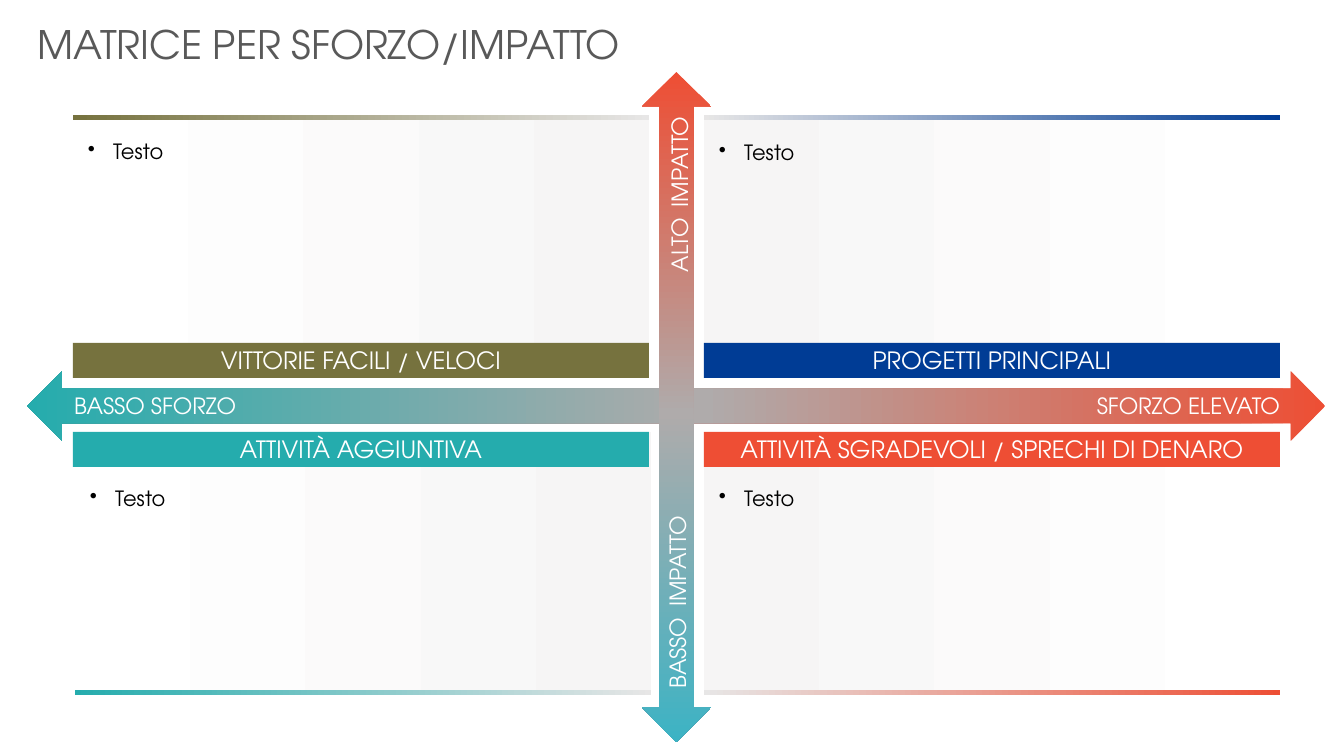
import copy

import pptx
import pptx.util
from lxml import etree
from pptx.dml.color import RGBColor
from pptx.enum.shapes import MSO_SHAPE
from pptx.enum.text import MSO_ANCHOR, MSO_AUTO_SIZE, PP_ALIGN
from pptx.oxml.ns import qn

COLORS = {
    "title": "595959", "text": "000000", "white": "FFFFFF",
    "panel": "F6F5F5", "fade": "E7E6E6", "middle": "AFABAB",
    "olive": "76723E", "blue": "003C95", "teal": "25ACAD", "red": "EE4E34",
    "warm": "ED4F35", "aqua": "3CB3C4",
}
PANEL_WIDTH, PANEL_HEIGHT = 576, 262
HEADER_HEIGHT, RULE_HEIGHT = 35, 5


class MatrixSlide:
    font = "TeX Gyre Adventor"
    scale = 914400 / 100.8

    def __init__(self, deck):
        deck.slide_width, deck.slide_height = self.px(1344), self.px(756)
        self.page = deck.slides.add_slide(deck.slide_layouts[5])

    def px(self, length):
        return pptx.util.Emu(round(length * self.scale))

    def place(self, left, top, width, height):
        return [self.px(value) for value in (left, top, width, height)]

    def style(self, para, size, color, align=PP_ALIGN.LEFT):
        para.alignment = align
        para.font.name = self.font
        para.font.size = pptx.util.Pt(size)
        para.font.color.rgb = RGBColor.from_string(COLORS[color])

    def margins(self, frame, left=0, top=0, right=0, bottom=0):
        frame.margin_left, frame.margin_top = self.px(left), self.px(top)
        frame.margin_right, frame.margin_bottom = self.px(right), self.px(bottom)

    def title(self, text, *area):
        box = self.page.shapes.title
        box.left, box.top, box.width, box.height = self.place(*area)
        frame = box.text_frame
        frame.text = text
        frame.vertical_anchor = MSO_ANCHOR.TOP
        frame.auto_size = MSO_AUTO_SIZE.SHAPE_TO_FIT_TEXT
        self.style(frame.paragraphs[0], 28, "title")

    def shape(self, kind, *area):
        shape = self.page.shapes.add_shape(kind, *self.place(*area))
        shape.shadow.inherit = False
        shape.line.fill.background()
        return shape

    def gradient(self, shape, stops, angle=0):
        """Fill with (position, color) stops; angle is counter-clockwise."""
        shape.fill.gradient()
        stop_list = shape.element.spPr.find(".//" + qn("a:gsLst"))
        while len(stop_list) < len(stops):
            stop_list.append(copy.deepcopy(stop_list[0]))
        for stop, (position, color) in zip(shape.fill.gradient_stops, stops):
            stop.position = position
            stop.color.rgb = RGBColor.from_string(COLORS[color])
        shape.fill.gradient_angle = angle

    def panel(self, left, top, start, end, text, inset_top, inset_bottom):
        box = self.shape(MSO_SHAPE.RECTANGLE, left, top, PANEL_WIDTH, PANEL_HEIGHT)
        self.gradient(box, [(0, start), (1, end)])
        frame = box.text_frame
        frame.text = text
        frame.vertical_anchor = MSO_ANCHOR.TOP
        self.margins(frame, 15, inset_top, 10, inset_bottom)
        para = frame.paragraphs[0]
        self.style(para, 15, "text")
        para.line_spacing = 1.15
        para.space_after = pptx.util.Pt(8)
        # Bullet with a hanging indent, placed before the default run style
        props = para.font._element.getparent()
        props.set("marL", str(pptx.util.Inches(0.25)))
        props.set("indent", str(-pptx.util.Inches(0.25)))
        bullet = etree.Element(qn("a:buChar"), char="•")
        props.find(qn("a:defRPr")).addprevious(bullet)

    def header(self, left, top, text, color):
        bar = self.shape(MSO_SHAPE.RECTANGLE, left, top, PANEL_WIDTH, HEADER_HEIGHT)
        bar.fill.solid()
        bar.fill.fore_color.rgb = RGBColor.from_string(COLORS[color])
        frame = bar.text_frame
        frame.text = text
        frame.vertical_anchor = MSO_ANCHOR.MIDDLE
        self.margins(frame)
        self.style(frame.paragraphs[0], 17, "white", PP_ALIGN.CENTER)

    def rule(self, left, top, start, end):
        bar = self.shape(MSO_SHAPE.RECTANGLE, left, top, PANEL_WIDTH, RULE_HEIGHT)
        self.gradient(bar, [(0, start), (1, end)])

    def axis(self, area, stops, rotation=0):
        arrow = self.shape(MSO_SHAPE.UP_DOWN_ARROW, *area)
        arrow.adjustments[0], arrow.adjustments[1] = 0.463, 0.5
        arrow.rotation = rotation
        self.gradient(arrow, stops, 270)

    def label(self, area, words, align=PP_ALIGN.LEFT, rotation=0):
        """Axis label; a rotated one has a wide gap between its words."""
        box = self.page.shapes.add_textbox(*self.place(*area))
        box.rotation = rotation
        frame = box.text_frame
        frame.word_wrap = not rotation
        frame.vertical_anchor = MSO_ANCHOR.MIDDLE
        self.margins(frame)
        para = frame.paragraphs[0]
        self.style(para, 16, "white", align)
        for index, word in enumerate(words):
            if index:
                gap = para.add_run()
                gap.text = " "
                gap.font.size = pptx.util.Pt(28)
            span = para.add_run()
            span.text = word


def main():
    deck = pptx.Presentation()
    matrix = MatrixSlide(deck)
    matrix.title("MATRICE PER SFORZO/IMPATTO", 27, 15, 754, 57)

    # Quadrants: column, row, panel left, panel top, heading, heading and rule colors
    columns, header_tops, rule_tops = (73, 704), (343, 432), (115, 690)
    insets = ((20, 30), (50, 5))
    quadrants = [
        (0, 0, 73, 115, "VITTORIE FACILI / VELOCI", "olive", "olive"),
        (1, 0, 704, 116, "PROGETTI PRINCIPALI", "blue", "blue"),
        (0, 1, 75, 432, "ATTIVITÀ AGGIUNTIVA", "teal", "teal"),
        (1, 1, 704, 432, "ATTIVITÀ SGRADEVOLI / SPRECHI DI DENARO", "red", "warm"),
    ]
    for column, row, left, top, heading, color, rule_color in quadrants:
        # Both gradients run from the outer edge towards the vertical axis
        order = -1 if column else 1
        matrix.panel(left, top, *("white", "panel")[::order], "Testo", *insets[row])
        matrix.header(columns[column], header_tops[row], heading, color)
        matrix.rule(left, rule_tops[row], *(rule_color, "fade")[::order])

    # Axes
    matrix.axis((642, -243, 69, 1298),
                [(0, "warm"), (0.48, "middle"), (1, "teal")], 90)
    matrix.axis((642, 72, 69, 670),
                [(0, "red"), (0.51, "middle"), (1, "aqua")])

    # Axis labels
    matrix.label((74, 391, 256, 30), ["BASSO SFORZO"])
    matrix.label((1088, 391, 192, 30), ["SFORZO ELEVATO"], PP_ALIGN.RIGHT)
    matrix.label((562, 559, 218, 41), ["BASSO", "IMPATTO"], rotation=270)
    matrix.label((582, 174, 181, 41), ["ALTO", "IMPATTO"], PP_ALIGN.CENTER, 270)

    deck.save("out.pptx")


if __name__ == "__main__":
    main()
